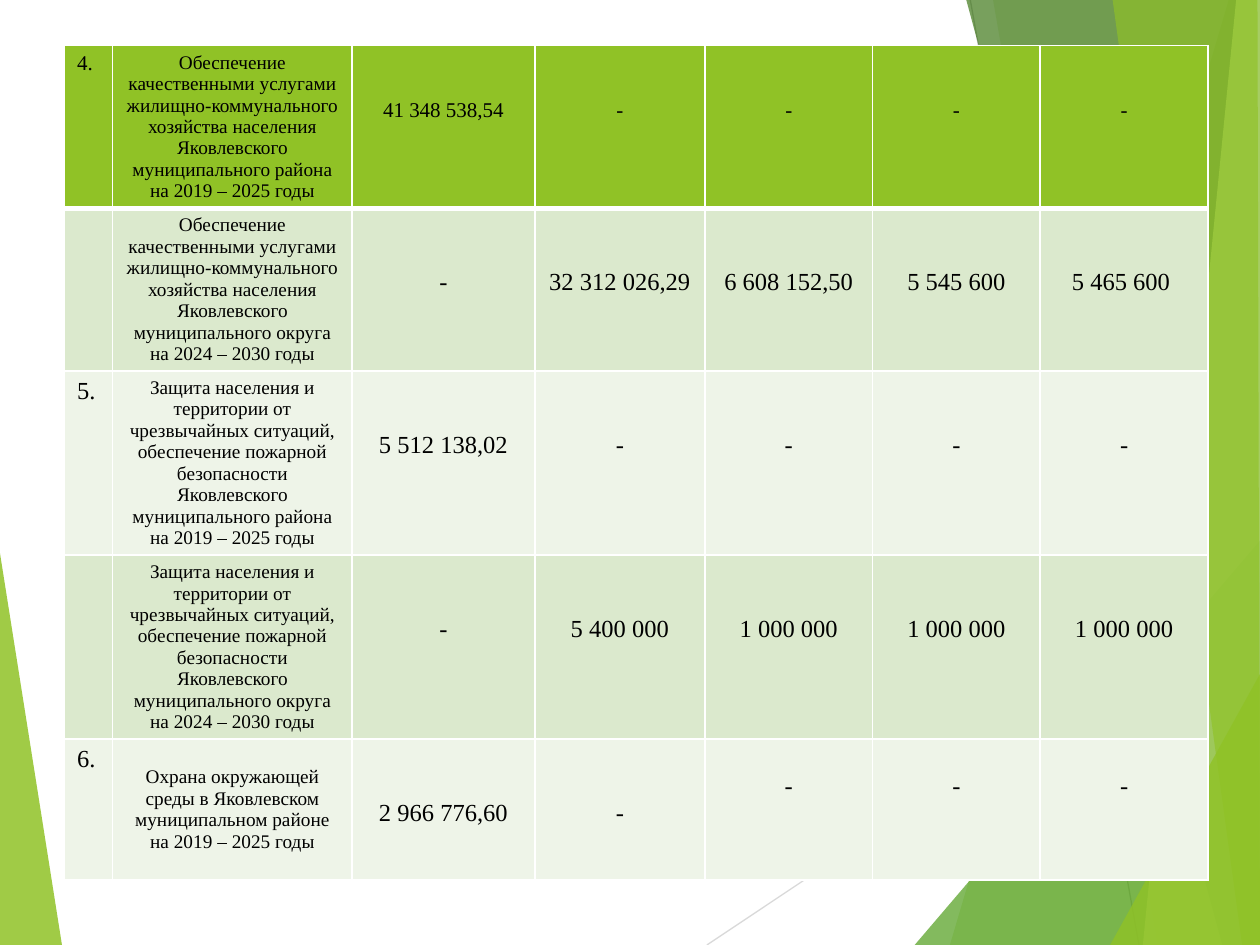
from lxml.etree import SubElement as Sub
from pptx import Presentation
from pptx.dml.color import RGBColor as RGB
from pptx.enum.shapes import MSO_CONNECTOR as Link
from pptx.enum.text import MSO_ANCHOR as Anchor, PP_ALIGN as Align
from pptx.oxml.ns import qn
from pptx.util import Cm, Pt

LIME = RGB(0x90, 0xC2, 0x26)
GREEN = RGB(0x54, 0xA0, 0x21)
DARK = RGB(0x3F, 0x78, 0x19)
PALE = RGB(0xC0, 0xE4, 0x74)
SAGE = RGB(0xDB, 0xE9, 0xCD)
MIST = RGB(0xEE, 0xF4, 0xE8)
WHITE = RGB(0xFF, 0xFF, 0xFF)
BLACK = RGB(0, 0, 0)
LIGHT = RGB(0xD9, 0xD9, 0xD9)
GREY = RGB(0xBF, 0xBF, 0xBF)
WIDE, HIGH = 25.4, 19.05
FONT = "Times New Roman"

UTIL = "Обеспечение качественными услугами жилищно-коммунального хозяйства населения Яковлевского муниципального "
SAFE = "Защита населения и территории от чрезвычайных ситуаций, обеспечение пожарной безопасности Яковлевского муниципального "
OLD = "района на 2019 – 2025 годы"
NEW = "округа на 2024 – 2030 годы"
ROWS = [
    ("4.", UTIL + OLD, "41 348 538,54", "-", "-", "-", "-"),
    ("", UTIL + NEW, "-", "32 312 026,29", "6 608 152,50", "5 545 600", "5 465 600 "),
    ("5.", SAFE + OLD, "5 512 138,02", "-", "-", "-", "-"),
    ("", SAFE + NEW, "-", "5 400 000", "1 000 000", "1 000 000", "1 000 000"),
    ("6.", "Охрана окружающей среды в Яковлевском муниципальном районе на 2019 – 2025 годы",
     "2 966 776,60", "-", "-", "-", "-"),
]
COLS = [0.97, 4.83, 3.68, 3.43, 3.38, 3.38, 3.38]


def apply(item, form):
    for key, val in form.items():
        setattr(item, key, val)


def add_facet(slide, color, alpha, points):
    spots = [(Cm(x), Cm(y)) for x, y in points]
    build = slide.shapes.build_freeform(*spots[0])
    build.add_line_segments(spots[1:])
    facet = build.convert_to_shape()
    facet.shadow.inherit = False
    facet.line.fill.background()
    facet.fill.solid()
    facet.fill.fore_color.rgb = color
    tint = facet.fill._xPr.find(qn("a:solidFill"))[0]
    Sub(tint, qn("a:alpha"), val=str(alpha * 1000))


def add_band(slide, color, alpha, top, base, edge=WIDE):
    add_facet(slide, color, alpha, [(top, 0), (base, HIGH), (WIDE, HIGH), (edge, 0)])


def add_corner(slide, color, alpha, base, side):
    add_facet(slide, color, alpha, [(base, HIGH), (WIDE, side), (WIDE, HIGH)])


def add_line(slide, color, *ends):
    line = slide.shapes.add_connector(Link.STRAIGHT, *map(Cm, ends))
    apply(line.line, {"width": Pt(0.75)})
    line.line.color.rgb = color
    Sub(line._element.spPr, qn("a:effectLst"))


def add_edges(cell, top, base):
    props = cell._tc.get_or_add_tcPr()
    for side, width in {"L": 1, "R": 1, "T": top, "B": base}.items():
        edge = Sub(props, qn("a:ln" + side), w=str(Pt(width)))
        Sub(Sub(edge, qn("a:solidFill")), qn("a:srgbClr"), val=str(WHITE))


def fill_cell(cell, text, color, size, form):
    cell.fill.solid()
    cell.fill.fore_color.rgb = color
    apply(cell, {key: val for key, val in form.items() if key != "alignment"})
    if text:
        para = cell.text_frame.paragraphs[0]
        para.alignment = form["alignment"]
        run = para.add_run()
        run.text = text
        apply(run.font, {"name": FONT, "size": Pt(size), "bold": False})
        run.font.color.rgb = BLACK


def cell_form(row, col):
    if col == 0:
        return {"alignment": Align.LEFT}
    if col == 1:
        return {"alignment": Align.CENTER, "vertical_anchor": Anchor.MIDDLE}
    drop = 1.07 if row == 0 else 0.67 if row == 4 and col > 3 else 1.22
    return {"alignment": Align.CENTER, "margin_top": Cm(drop)}


def add_budget(slide):
    frame = slide.shapes.add_table(len(ROWS), len(COLS), Cm(1.3), Cm(0.92),
                                   Cm(sum(COLS)), Cm(2.84 * len(ROWS)))
    table = frame.table
    for col, width in zip(table.columns, COLS):
        col.width = Cm(width)
    for r, texts in enumerate(ROWS):
        table.rows[r].height = Cm(2.84)
        color = LIME if r == 0 else SAGE if r % 2 else MIST
        for c, text in enumerate(texts):
            cell = table.cell(r, c)
            add_edges(cell, 3 if r == 1 else 1, 3 if r == 0 else 1)
            size = 11 if c == 1 else 12 if r == 0 else 14
            fill_cell(cell, text, color, size, cell_form(r, c))


def add_decor(slide):
    add_facet(slide, LIME, 85, [(0, 11.15), (1.25, HIGH), (0, HIGH)])
    add_line(slide, LIGHT, 14.25, HIGH, WIDE, 11.61)
    add_line(slide, GREY, 19.56, 0, 22.96, HIGH)
    add_band(slide, LIME, 30, 24.77, 19.15)
    add_band(slide, LIME, 20, 20.02, 23.34)
    add_corner(slide, GREEN, 72, 18.44, 10.9)
    add_band(slide, DARK, 70, 19.48, 24.64)
    add_band(slide, PALE, 70, 24.92, 23.04)
    add_band(slide, LIME, 65, 22.43, 25.04, 25.35)
    add_corner(slide, LIME, 80, 22.38, 13.59)


def main():
    deck = Presentation()
    apply(deck, {"slide_width": Cm(WIDE), "slide_height": Cm(HIGH)})
    slide = deck.slides.add_slide(deck.slide_layouts[6])
    add_decor(slide)
    add_budget(slide)
    deck.save("out.pptx")


if __name__ == "__main__":
    main()
